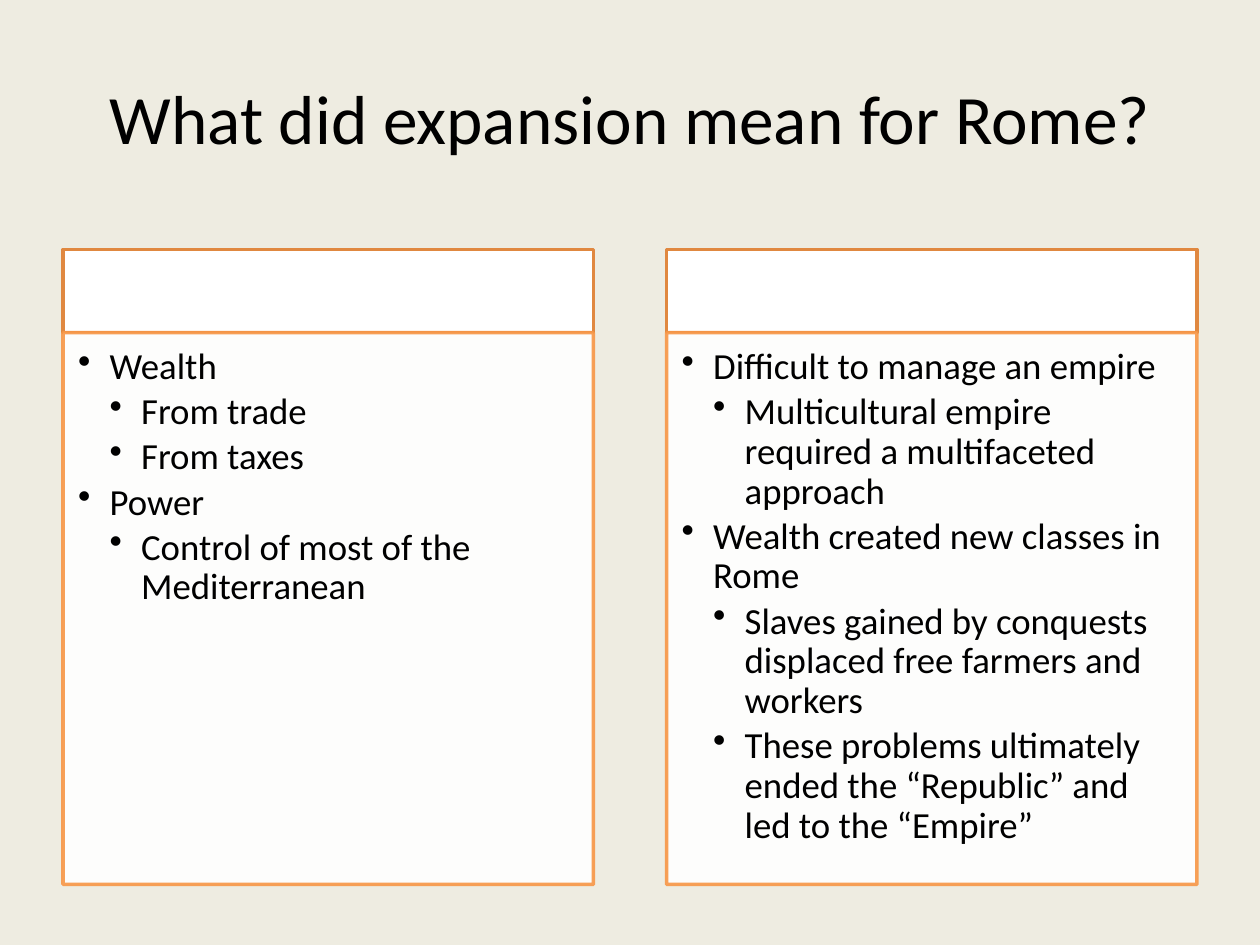
from lxml import etree
from pptx import Presentation
from pptx import util as u
from pptx.dml.color import RGBColor
from pptx.enum import shapes, text
from pptx.oxml.ns import qn

TITLE = "What did expansion mean for Rome?"
# One list per column: (outline level, wording)
COLUMNS = [
    [
        (1, "Wealth"),
        (2, "From trade"),
        (2, "From taxes"),
        (1, "Power"),
        (2, "Control of most of the Mediterranean"),
    ],
    [
        (1, "Difficult to manage an empire"),
        (2, "Multicultural empire required a multifaceted approach"),
        (1, "Wealth created new classes in Rome"),
        (2, "Slaves gained by conquests displaced free farmers and workers"),
        (2, "These problems ultimately ended the “Republic” and led to the “Empire”"),
    ],
]

FONT = "Calibri"
BACKGROUND = RGBColor(0xEE, 0xEC, 0xE1)
WHITE = RGBColor(0xFF, 0xFF, 0xFF)
BLACK = RGBColor(0x00, 0x00, 0x00)
HEADER_LINE = RGBColor(0xE0, 0x88, 0x40)
BODY_LINE = RGBColor(0xF7, 0x96, 0x46)

SLIDE_WIDTH, MARGIN = 10, 0.5
COLUMN_WIDTH = 4.21
COLUMN_STEP = SLIDE_WIDTH - 2 * MARGIN - COLUMN_WIDTH
HEADER_TOP, HEADER_HEIGHT, BODY_HEIGHT = 1.98, 0.66, 4.38
INDENT = 0.25


def set_opacity(fill, percent):
    color = fill._xPr.find(qn("a:solidFill"))[0]
    etree.SubElement(color, qn("a:alpha"), val=str(percent * 1000))


def add_panel(page, left, top, height, line_color):
    panel = page.shapes.add_shape(
        shapes.MSO_SHAPE.RECTANGLE,
        u.Inches(left), u.Inches(top), u.Inches(COLUMN_WIDTH), u.Inches(height))
    panel.shadow.inherit = False
    panel.fill.solid()
    panel.fill.fore_color.rgb = WHITE
    panel.line.color.rgb = line_color
    panel.line.width = u.Pt(2)
    return panel


def style_font(para, size):
    para.font.name = FONT
    para.font.size = u.Pt(size)
    para.font.color.rgb = BLACK


def write_bullets(frame, items):
    frame.word_wrap = True
    frame.vertical_anchor = text.MSO_ANCHOR.TOP
    frame.margin_left = frame.margin_top = u.Inches(0.12)
    frame.margin_right, frame.margin_bottom = u.Inches(0.16), u.Inches(0.18)
    for index, (level, wording) in enumerate(items):
        para = frame.paragraphs[0] if index == 0 else frame.add_paragraph()
        para.text = wording
        para.level = level
        para.alignment = text.PP_ALIGN.LEFT
        para.line_spacing = 0.9
        para.space_after = u.Pt(3.15)
        properties = para._p.get_or_add_pPr()
        properties.set("marL", str(u.Inches(INDENT * level)))
        properties.set("indent", str(u.Inches(-INDENT)))
        etree.SubElement(properties, qn("a:buChar"), char="•")
        style_font(para, 21)


deck = Presentation()
deck.slide_width, deck.slide_height = u.Inches(SLIDE_WIDTH), u.Inches(7.5)
page = deck.slides.add_slide(deck.slide_layouts[6])
page.background.fill.solid()
page.background.fill.fore_color.rgb = BACKGROUND

# Title
title = page.shapes.add_textbox(
    u.Inches(MARGIN), u.Inches(0.3), u.Inches(SLIDE_WIDTH - 2 * MARGIN), u.Inches(1.25))
title.text_frame.word_wrap = True
title.text_frame.vertical_anchor = text.MSO_ANCHOR.MIDDLE
heading = title.text_frame.paragraphs[0]
heading.text = TITLE
heading.alignment = text.PP_ALIGN.CENTER
style_font(heading, 39.6)

# Columns: an empty header band above a bulleted body
for number, items in enumerate(COLUMNS):
    left = MARGIN + number * COLUMN_STEP
    add_panel(page, left, HEADER_TOP, HEADER_HEIGHT, HEADER_LINE)
    body = add_panel(page, left, HEADER_TOP + HEADER_HEIGHT, BODY_HEIGHT, BODY_LINE)
    set_opacity(body.fill, 90)
    set_opacity(body.line.fill, 90)
    write_bullets(body.text_frame, items)

deck.save("out.pptx")
